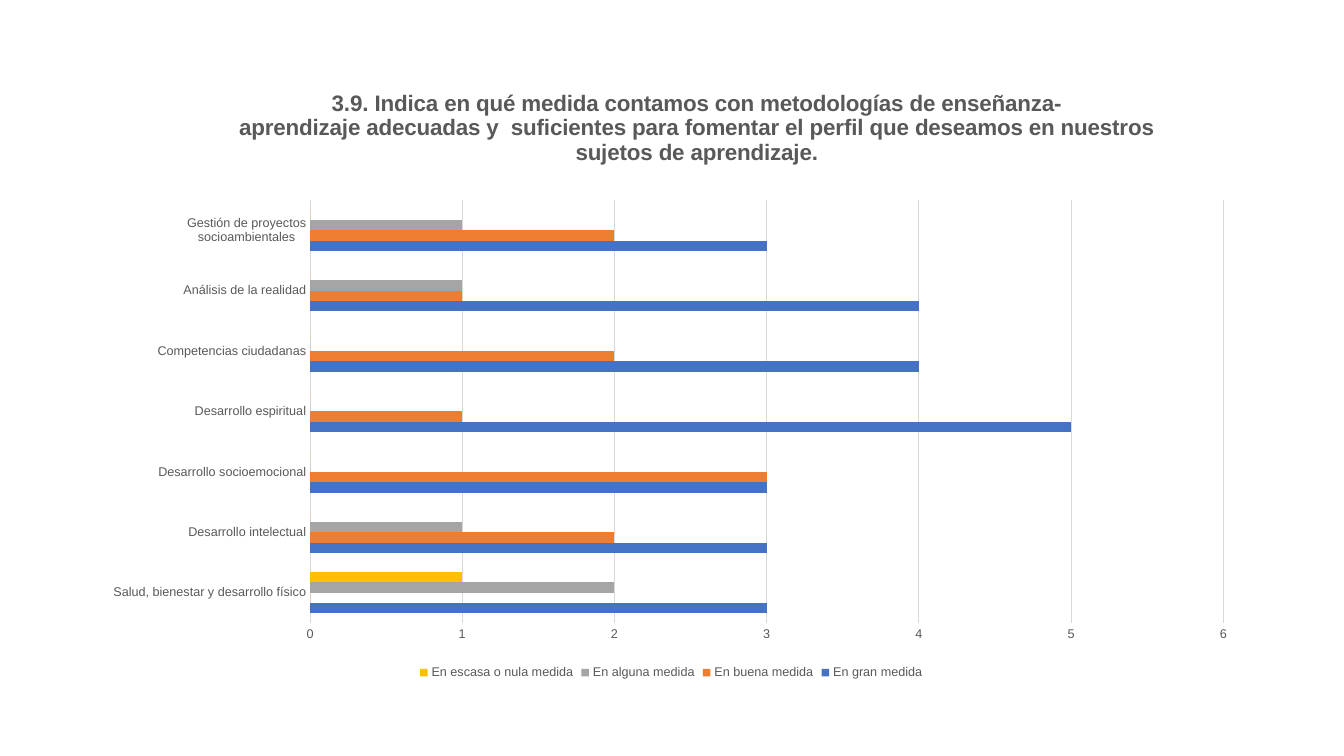
import dataclasses

import pptx
import pptx.chart.data
import pptx.dml.color
import pptx.enum.chart
import pptx.oxml
import pptx.oxml.ns
import pptx.util


@dataclasses.dataclass
class Theme:
    font: str = "Arial"
    text: str = "595959"
    grid: str = "D9D9D9"
    title_size: int = 16
    label_size: int = 9
    line_width: float = 0.75


HARD_SPACE = chr(160)
TITLE = HARD_SPACE.join([
    "3.9. Indica en qué medida contamos con",
    "metodologías de enseñanza-aprendizaje",
    "adecuadas y",
    " suficientes para fomentar el perfil que deseamos en nuestros sujetos de aprendizaje.",
])
CATEGORIES = [
    "Salud, bienestar y desarrollo físico",
    "Desarrollo intelectual",
    "Desarrollo socioemocional",
    "Desarrollo espiritual",
    "Competencias ciudadanas",
    "Análisis de la realidad",
    "Gestión de proyectos socioambientales",
]
SERIES = [
    ("En gran medida", "4472C4", [3, 3, 3, 5, 4, 4, 3]),
    ("En buena medida", "ED7D31", [0, 2, 3, 1, 2, 1, 2]),
    ("En alguna medida", "A5A5A5", [2, 1, 0, 0, 0, 1, 1]),
    ("En escasa o nula medida", "FFC000", [1, 0, 0, 0, 0, 0, 0]),
]


def color(value):
    return pptx.dml.color.RGBColor.from_string(value)


def assign(target, values):
    for name, value in values.items():
        setattr(target, name, value)


def layout(fractions, inner=False):
    namespace = pptx.oxml.ns.nsdecls("c")
    target = '<c:layoutTarget val="inner"/>' if inner else ""
    modes = "".join(f'<c:{axis}Mode val="edge"/>' for axis in "xy")
    places = "".join(f'<c:{key} val="{value:.4f}"/>' for key, value in zip("xywh", fractions))
    return pptx.oxml.parse_xml(
        f"<c:layout {namespace}><c:manualLayout>{target}{modes}{places}</c:manualLayout></c:layout>"
    )


def drop_layout(element):
    for old in element.findall(pptx.oxml.ns.qn("c:layout")):
        element.remove(old)


class SlideBuilder:
    SCALE = 914400 / 100.8

    def __init__(self, page, theme):
        self.page = page
        self.theme = theme

    def lengths(self, *pixels):
        return [round(pixel * self.SCALE) for pixel in pixels]

    def style_font(self, font, size, bold=False):
        assign(font, {"name": self.theme.font, "size": pptx.util.Pt(size), "bold": bold})
        font.color.rgb = color(self.theme.text)

    def style_line(self, line):
        line.color.rgb = color(self.theme.grid)
        line.width = pptx.util.Pt(self.theme.line_width)

    def bar_chart(self, box, plot_box):
        left, top, width, height = box
        data = pptx.chart.data.CategoryChartData()
        data.categories = CATEGORIES
        for name, _, values in SERIES:
            data.add_series(name, values)
        kind = pptx.enum.chart.XL_CHART_TYPE.BAR_CLUSTERED
        chart = self.page.shapes.add_chart(kind, *self.lengths(*box), data).chart
        self.style_font(chart.font, self.theme.label_size)

        plot = chart.plots[0]
        assign(plot, {"gap_width": 182, "overlap": 0, "vary_by_categories": False})
        for series, (_, fill, _) in zip(plot.series, SERIES):
            series.format.fill.solid()
            series.format.fill.fore_color.rgb = color(fill)
            series.invert_if_negative = False

        x, y, plot_width, plot_height = plot_box
        area = plot._element.getparent()
        drop_layout(area)
        fractions = [(x - left) / width, (y - top) / height, plot_width / width, plot_height / height]
        area.insert(0, layout(fractions, inner=True))
        return chart

    def chart_title(self, chart, wording, box, point):
        chart.has_title = True
        title = chart.chart_title
        title.include_in_layout = False
        para = title.text_frame.paragraphs[0]
        span = para.add_run()
        span.text = wording
        for font in (para.font, span.font):
            self.style_font(font, self.theme.title_size, bold=True)
        element = title._element
        drop_layout(element)
        left, top, width, height = box
        fractions = [(point[0] - left) / width, (point[1] - top) / height]
        element.find(pptx.oxml.ns.qn("c:tx")).addnext(layout(fractions))

    def axes(self, chart):
        tick = pptx.enum.chart.XL_TICK_MARK.NONE
        for axis in (chart.category_axis, chart.value_axis):
            assign(axis, {"major_tick_mark": tick, "minor_tick_mark": tick})
            self.style_font(axis.tick_labels.font, self.theme.label_size)
        chart.category_axis.has_major_gridlines = False
        self.style_line(chart.category_axis.format.line)
        scale = chart.value_axis
        assign(scale, {"minimum_scale": 0, "maximum_scale": 6, "major_unit": 1})
        scale.has_major_gridlines = True
        self.style_line(scale.major_gridlines.format.line)
        scale.format.line.fill.background()

    def legend(self, chart):
        chart.has_legend = True
        position = pptx.enum.chart.XL_LEGEND_POSITION.BOTTOM
        assign(chart.legend, {"position": position, "include_in_layout": False})
        self.style_font(chart.legend.font, self.theme.label_size)


def main():
    deck = pptx.Presentation()
    deck.slide_width = pptx.util.Inches(13.33)
    deck.slide_height = pptx.util.Inches(7.5)
    page = deck.slides.add_slide(deck.slide_layouts[6])
    builder = SlideBuilder(page, Theme())
    box = (91, 85, 1160, 599)
    chart = builder.bar_chart(box, plot_box=(310, 200, 913, 423))
    builder.chart_title(chart, TITLE, box, point=(235, 85))
    builder.axes(chart)
    builder.legend(chart)
    deck.save("out.pptx")


if __name__ == "__main__":
    main()
